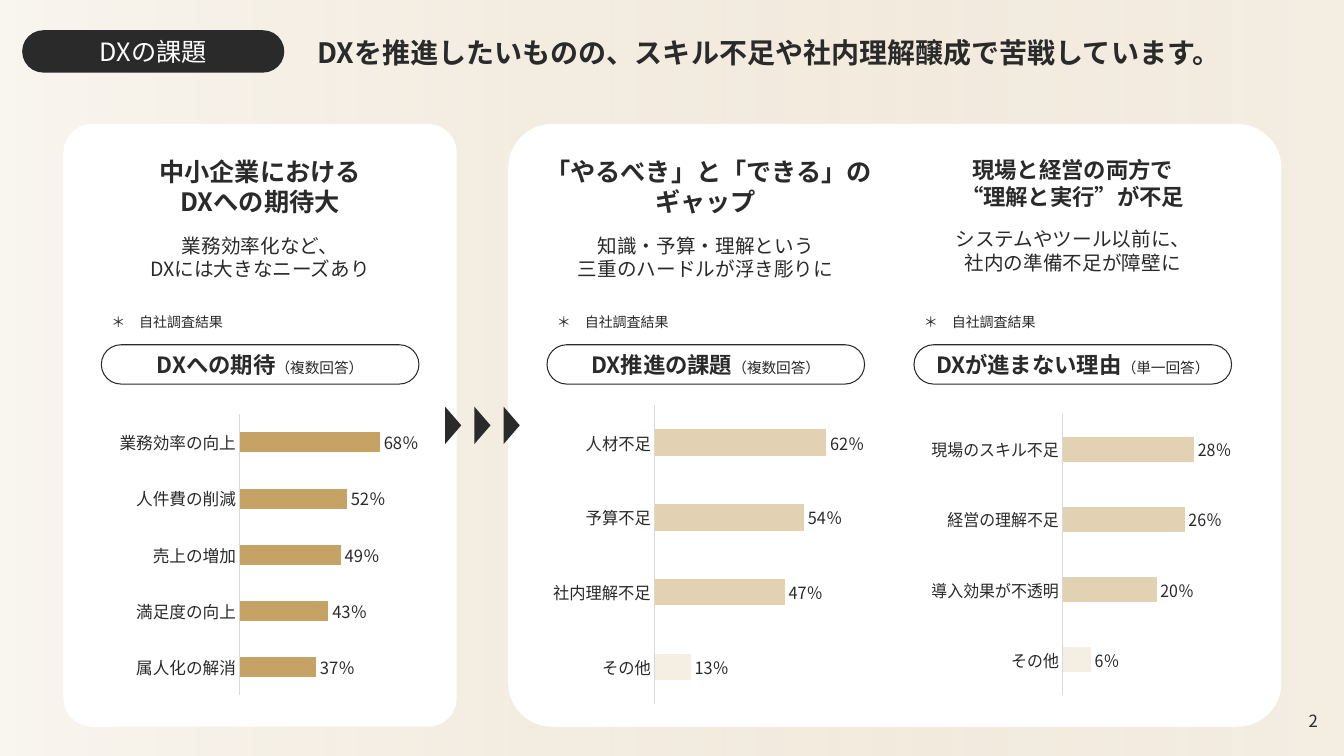
from dataclasses import dataclass
from lxml.etree import SubElement
from pptx import Presentation
from pptx.chart.data import CategoryChartData
from pptx.dml.color import RGBColor
from pptx.enum.chart import XL_CHART_TYPE, XL_LABEL_POSITION, XL_TICK_MARK
from pptx.enum.shapes import MSO_SHAPE
from pptx.enum.text import MSO_ANCHOR, MSO_AUTO_SIZE, PP_ALIGN
from pptx.oxml import parse_xml
from pptx.oxml.ns import nsdecls, qn
from pptx.util import Inches, Pt


@dataclass(frozen=True)
class Theme:
    font: str = "Noto Sans CJK JP"
    ink: RGBColor = RGBColor.from_string("2A2A2A")
    white: RGBColor = RGBColor.from_string("FFFFFF")
    gold: RGBColor = RGBColor.from_string("C7A265")
    sand: RGBColor = RGBColor.from_string("E3D1B3")
    cream: RGBColor = RGBColor.from_string("F5EEE3")
    rule: RGBColor = RGBColor.from_string("D9D9D9")
    title: float = 20
    tag: float = 18
    body: float = 14
    label: float = 12
    small: float = 10.5
    note: float = 10


theme = Theme()


def add_box(kind, left, top, width, height, fill=None, line=None):
    box = page.shapes.add_shape(kind, Inches(left), Inches(top), Inches(width), Inches(height))
    box.shadow.inherit = False
    if fill is None:
        box.fill.background()
    else:
        box.fill.solid()
        box.fill.fore_color.rgb = fill
    if line is None:
        box.line.fill.background()
    else:
        box.line.color.rgb = line
        box.line.width = Pt(0.75)
    return box


def style_para(para, size, color=theme.ink, bold=False, align=PP_ALIGN.CENTER):
    para.alignment = align
    for span in para.runs:
        span.font.name = theme.font
        span.font.size = Pt(size)
        span.font.bold = bold
        span.font.color.rgb = color
        SubElement(span.font._element, qn("a:ea"), typeface=theme.font)


deck = Presentation()
deck.slide_width, deck.slide_height = Inches(13.33), Inches(7.5)
page = deck.slides.add_slide(deck.slide_layouts[5])

backdrop = add_box(MSO_SHAPE.RECTANGLE, 0, 0, 13.33, 7.5)
backdrop.fill.gradient()
backdrop.fill.gradient_angle = 0
for stop, color in zip(backdrop.fill.gradient_stops, (theme.sand, theme.cream)):
    stop.color.rgb = color
SubElement(next(backdrop.element.iter(qn("a:srgbClr"))), qn("a:alpha"), val="20000")

title = page.shapes.title
title.element.addprevious(backdrop.element)
title.left, title.top, title.width, title.height = (Inches(n) for n in (3.05, 0.28, 10.06, 0.47))
title.text_frame.text = "DXを推進したいものの、スキル不足や社内理解醸成で苦戦しています。"
title.text_frame.auto_size = MSO_AUTO_SIZE.NONE
title.text_frame.vertical_anchor = MSO_ANCHOR.MIDDLE
style_para(title.text_frame.paragraphs[0], theme.title, bold=True, align=PP_ALIGN.LEFT)

tag = add_box(MSO_SHAPE.ROUNDED_RECTANGLE, 0.22, 0.3, 2.6, 0.42, theme.ink)
tag.adjustments[0] = 0.5
tag.text_frame.text = "DXの課題"
style_para(tag.text_frame.paragraphs[0], theme.tag, theme.white)

wide_card = add_box(MSO_SHAPE.ROUNDED_RECTANGLE, 5.04, 1.23, 7.67, 5.98, theme.white)
wide_card.adjustments[0] = 0.073

columns = [
    dict(left=0.63, fill=theme.white, size=18, bar=theme.gold, other=theme.gold,
         head="中小企業における\nDXへの期待大", lead="業務効率化など、\nDXには大きなニーズあり",
         topic="DXへの期待", answer="（複数回答）", plot=(0.441, 0.524),
         data={"属人化の解消": 37, "満足度の向上": 43, "売上の増加": 49, "人件費の削減": 52, "業務効率の向上": 68}),
    dict(left=5.05, fill=None, size=18, bar=theme.sand, other=theme.cream,
         head=" 「やるべき」と「できる」の\nギャップ", lead="知識・予算・理解という\n三重のハードルが浮き彫りに",
         topic="DX推進の課題", answer="（複数回答）", plot=None,
         data={"その他": 13, "社内理解不足": 47, "予算不足": 54, "人材不足": 62}),
    dict(left=8.69, fill=None, size=16, bar=theme.sand, other=theme.cream,
         head="現場と経営の両方で\n“理解と実行”が不足", lead="システムやツール以前に、\n社内の準備不足が障壁に",
         topic="DXが進まない理由", answer="（単一回答）", plot=(0.494, 0.467),
         data={"その他": 6, "導入効果が不透明": 20, "経営の理解不足": 26, "現場のスキル不足": 28}),
]

for column in columns:
    card = add_box(MSO_SHAPE.ROUNDED_RECTANGLE, column["left"], 1.23, 3.9, 5.98, column["fill"])
    card.adjustments[0] = 0.073
    frame = card.text_frame
    frame.vertical_anchor = MSO_ANCHOR.TOP
    frame.margin_top = Inches(0.24)
    frame.text = column["head"].replace("\n", "\v")
    style_para(frame.paragraphs[0], column["size"], bold=True)
    lead = frame.add_paragraph()
    lead.text = column["lead"]
    lead.space_before = Pt(12)
    style_para(lead, theme.body)

    inner = column["left"] + 0.375
    note = page.shapes.add_textbox(Inches(inner), Inches(3.08), Inches(1.81), Inches(0.22))
    note.text_frame.word_wrap = True
    note.text_frame.vertical_anchor = MSO_ANCHOR.MIDDLE
    note.text_frame.text = "＊　自社調査結果"
    style_para(note.text_frame.paragraphs[0], theme.note, align=PP_ALIGN.LEFT)

    pill = add_box(MSO_SHAPE.ROUNDED_RECTANGLE, inner, 3.42, 3.15, 0.39, line=theme.ink)
    pill.adjustments[0] = 0.5
    para = pill.text_frame.paragraphs[0]
    para.text = column["topic"]
    para.add_run().text = column["answer"]
    style_para(para, 16, bold=True)
    para.runs[1].font.size = Pt(theme.small)
    para.runs[1].font.bold = False

    data = CategoryChartData(number_format='0"％"')
    data.categories = list(column["data"])
    data.add_series("回答率", list(column["data"].values()))
    chart = page.shapes.add_chart(XL_CHART_TYPE.BAR_CLUSTERED, Inches(inner), Inches(3.96),
                                  Inches(3.15), Inches(3.09), data).chart
    chart.has_title = False
    chart.has_legend = False
    chart.font.name = theme.font
    chart.font.size = Pt(theme.label)
    chart.font.color.rgb = theme.ink
    chart.value_axis.visible = False
    chart.value_axis.minimum_scale = 0
    chart.value_axis.has_major_gridlines = False
    chart.category_axis.major_tick_mark = XL_TICK_MARK.NONE
    chart.category_axis.format.line.color.rgb = theme.rule
    chart.category_axis.format.line.width = Pt(0.75)
    bars = chart.plots[0]
    bars.gap_width = 182
    bars.vary_by_categories = False
    bars.has_data_labels = True
    labels = bars.data_labels
    labels.show_value = True
    labels.position = XL_LABEL_POSITION.OUTSIDE_END
    labels.number_format = '0"％"'
    labels.number_format_is_linked = False
    labels.font.name = theme.font
    labels.font.size = Pt(theme.label)
    labels.font.color.rgb = theme.ink
    series = bars.series[0]
    series.format.fill.solid()
    series.format.fill.fore_color.rgb = column["bar"]
    if column["other"] != column["bar"]:
        other = series.points[0].format.fill
        other.solid()
        other.fore_color.rgb = column["other"]
    if column["plot"]:
        x, w = column["plot"]
        area = next(chart.element.iter(qn("c:plotArea")))
        for layout in area.findall(qn("c:layout")):
            area.remove(layout)
        area.insert(0, parse_xml(
            f'<c:layout {nsdecls("c")}><c:manualLayout><c:layoutTarget val="inner"/>'
            f'<c:xMode val="edge"/><c:yMode val="edge"/><c:x val="{x}"/><c:y val="0.049"/>'
            f'<c:w val="{w}"/><c:h val="0.901"/></c:manualLayout></c:layout>'))

for step in range(3):
    arrow = add_box(MSO_SHAPE.ISOSCELES_TRIANGLE, 4.31 + 0.29 * step, 4.14, 0.37, 0.16, theme.ink)
    arrow.rotation = 90

number = page.shapes.add_textbox(Inches(12.68), Inches(6.95), Inches(0.49), Inches(0.4))
number.text_frame.word_wrap = True
number.text_frame.vertical_anchor = MSO_ANCHOR.MIDDLE
number.text_frame.text = "2"
style_para(number.text_frame.paragraphs[0], theme.label, align=PP_ALIGN.RIGHT)

deck.save("out.pptx")
